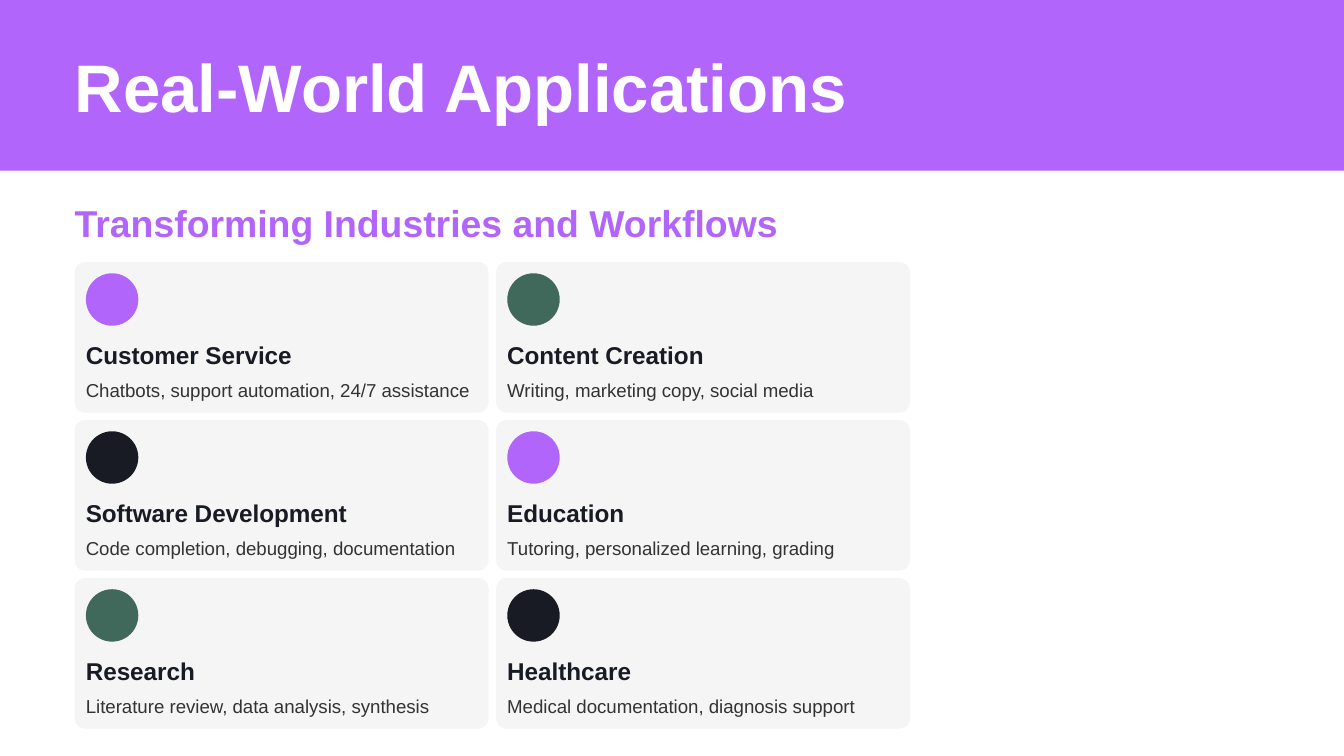
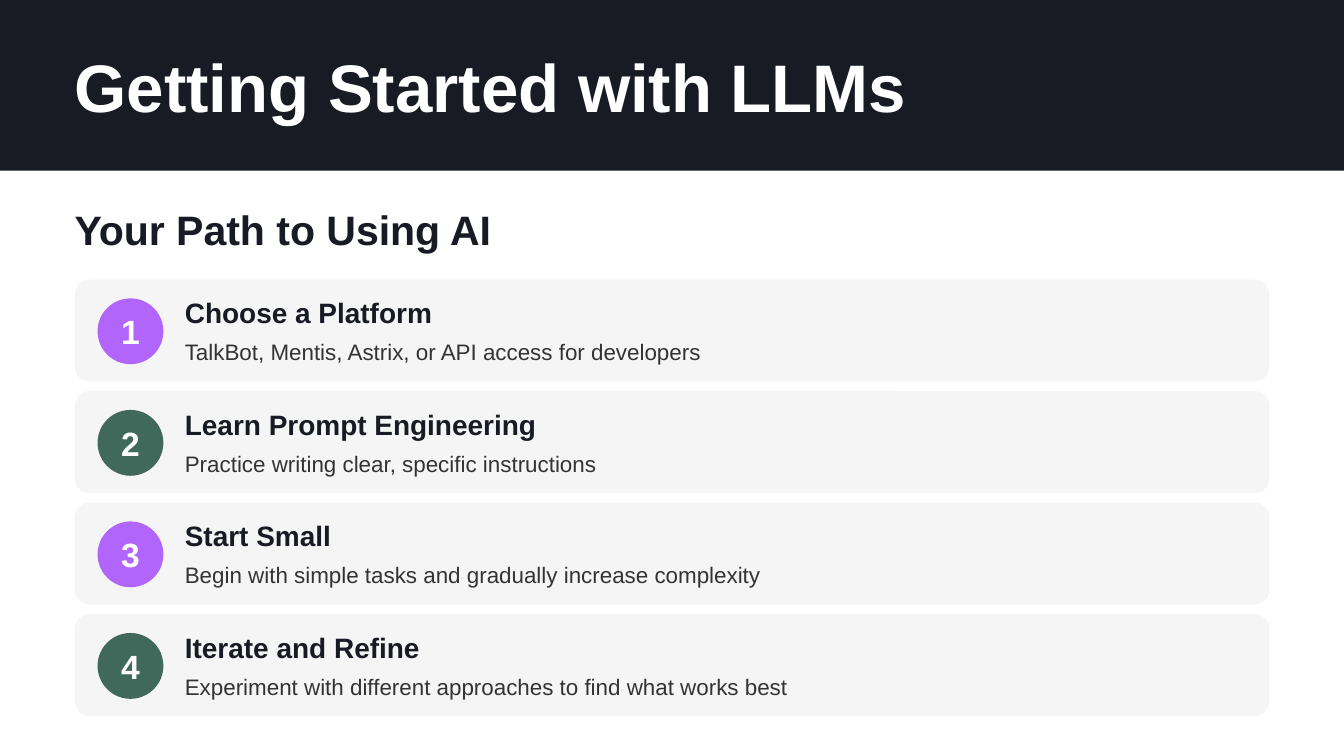
from pptx import Presentation
from pptx.dml.color import RGBColor
from pptx.enum.shapes import MSO_SHAPE as Preset
from pptx.enum.text import MSO_ANCHOR as Anchor, PP_ALIGN as Align
from pptx.util import Inches, Pt

PURPLE = RGBColor(0xB1, 0x65, 0xFB)
GREEN = RGBColor(0x40, 0x69, 0x5B)
INK = RGBColor(0x18, 0x1B, 0x24)
BODY = RGBColor(0x33, 0x33, 0x33)
PALE = RGBColor(0xF5, 0xF5, 0xF5)
WHITE = RGBColor(0xFF, 0xFF, 0xFF)

FONT = "Arial"
SLIDE_WIDTH = 10
SLIDE_HEIGHT = SLIDE_WIDTH * 9 / 16
MARGIN = 5 / 9
HEADING_WIDTH = 9.07

INDUSTRIES = [
    ("Customer Service", "Chatbots, support automation, 24/7 assistance", PURPLE),
    ("Content Creation", "Writing, marketing copy, social media", GREEN),
    ("Software Development", "Code completion, debugging, documentation", INK),
    ("Education", "Tutoring, personalized learning, grading", PURPLE),
    ("Research", "Literature review, data analysis, synthesis", GREEN),
    ("Healthcare", "Medical documentation, diagnosis support", INK),
]
STEPS = [
    ("Choose a Platform", "TalkBot, Mentis, Astrix, or API access for developers"),
    ("Learn Prompt Engineering", "Practice writing clear, specific instructions"),
    ("Start Small", "Begin with simple tasks and gradually increase complexity"),
    ("Iterate and Refine", "Experiment with different approaches to find what works best"),
]


def style_text(frame, text, size, color, bold):
    """Fill a text frame with one styled paragraph and no insets."""
    frame.margin_left = frame.margin_right = 0
    frame.margin_top = frame.margin_bottom = 0
    frame.word_wrap = True
    frame.text = text
    paragraph = frame.paragraphs[0]
    font = paragraph.runs[0].font
    font.name, font.size, font.bold = FONT, Pt(size), bold
    font.color.rgb = color
    return paragraph


def add_text(slide, box, text, size, color, bold=True, after=None, leading=None):
    """Place one line of text in a box of (left, top, width, height)."""
    frame = slide.shapes.add_textbox(*map(Inches, box)).text_frame
    paragraph = style_text(frame, text, size, color, bold)
    if after is not None:
        paragraph.space_after = Pt(after)
    if leading is not None:
        paragraph.line_spacing = Pt(leading)


def add_block(slide, preset, box, color, rounding=None):
    """Draw a flat filled shape without outline or shadow."""
    block = slide.shapes.add_shape(preset, *map(Inches, box))
    block.shadow.inherit = False
    block.fill.solid()
    block.fill.fore_color.rgb = color
    block.line.fill.background()
    if rounding is not None:
        block.adjustments[0] = rounding
    return block


def add_header(slide, title, color):
    """Draw the full-width band with the slide title."""
    add_block(slide, Preset.RECTANGLE, (0, 0, SLIDE_WIDTH, 1.27), color)
    add_text(slide, (MARGIN, 0.34, HEADING_WIDTH, 0.57), title, 36, WHITE)


def add_industry_card(slide, box, industry, uses, color):
    """Draw a card with a coloured dot above an industry and its uses."""
    left, top, width, _ = box
    padding = 1 / 12
    inner, text_width = left + padding, width - 0.11
    add_block(slide, Preset.ROUNDED_RECTANGLE, box, PALE, 0.07)
    add_block(slide, Preset.OVAL, (inner, top + padding, 0.39, 0.39), color)
    add_text(slide, (inner, top + 0.58, text_width, 0.22), industry, 13, INK, after=5)
    add_text(slide, (inner, top + 0.87, text_width, 0.17), uses, 10, BODY,
             bold=False, leading=12)


def add_step_row(slide, box, number, step, advice, color):
    """Draw a row with a numbered badge beside a step and its advice."""
    left, top, width, _ = box
    text_left, text_width = left + 0.82, width - 0.83
    add_block(slide, Preset.ROUNDED_RECTANGLE, box, PALE, 0.15)
    badge = add_block(slide, Preset.OVAL, (left + 0.17, top + 0.14, 0.49, 0.49), color)
    label = style_text(badge.text_frame, str(number), 18, WHITE, True)
    label.alignment = Align.CENTER
    badge.text_frame.vertical_anchor = Anchor.MIDDLE
    add_text(slide, (text_left, top + 0.12, text_width, 0.24), step, 15, INK, after=4)
    add_text(slide, (text_left, top + 0.42, text_width, 0.22), advice, 12, BODY,
             bold=False, leading=15.6)


def build_applications(slide):
    """Build the two-column grid of industries."""
    add_header(slide, "Real-World Applications", PURPLE)
    add_text(slide, (MARGIN, 1.49, HEADING_WIDTH, 0.32),
             "Transforming Industries and Workflows", 20, PURPLE, after=10)
    width, height, gap = 3.08, 1.12, 1 / 18
    for index, industry in enumerate(INDUSTRIES):
        row, column = divmod(index, 2)
        left = MARGIN + column * (width + gap)
        top = 1.95 + row * (height + gap)
        add_industry_card(slide, (left, top, width, height), *industry)


def build_getting_started(slide):
    """Build the stacked list of numbered steps."""
    add_header(slide, "Getting Started with LLMs", INK)
    add_text(slide, (MARGIN, 1.52, HEADING_WIDTH, 0.35),
             "Your Path to Using AI", 22, INK, after=15)
    for index, (step, advice) in enumerate(STEPS):
        box = (MARGIN, 2.08 + index * 0.83, 8.89, 0.76)
        color = (PURPLE, GREEN)[index % 2]
        add_step_row(slide, box, index + 1, step, advice, color)


def main():
    """Build both slides and save the presentation."""
    deck = Presentation()
    deck.slide_width, deck.slide_height = Inches(SLIDE_WIDTH), Inches(SLIDE_HEIGHT)
    blank = deck.slide_layouts[6]
    for build in (build_applications, build_getting_started):
        slide = deck.slides.add_slide(blank)
        slide.background.fill.solid()
        slide.background.fill.fore_color.rgb = WHITE
        build(slide)
    deck.save("out.pptx")


if __name__ == "__main__":
    main()
